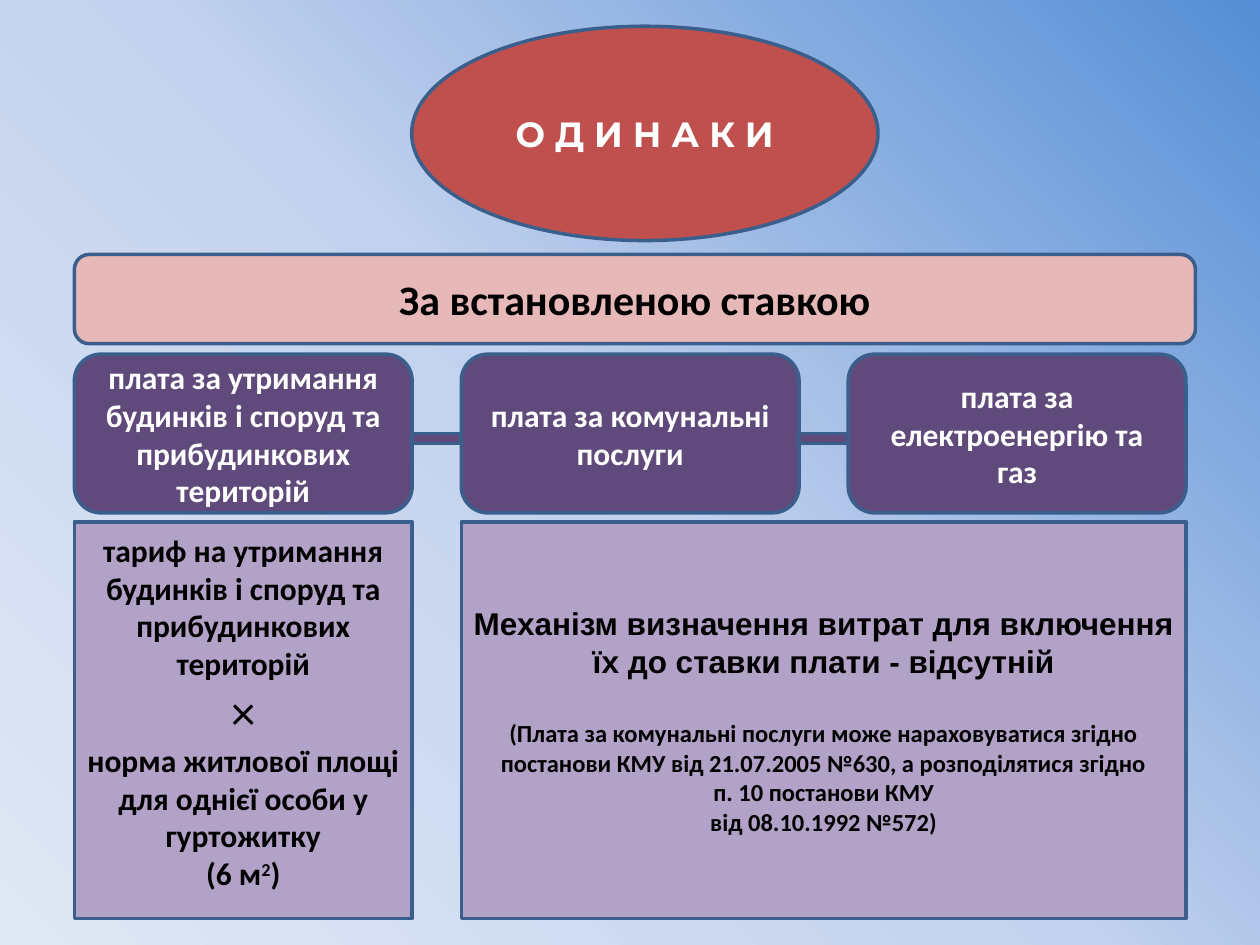
from copy import deepcopy

from pptx import Presentation
from pptx.dml.color import RGBColor
from pptx.enum.shapes import MSO_SHAPE as Preset
from pptx.enum.text import MSO_ANCHOR as Anchor, PP_ALIGN as Align
from pptx.util import Cm, Pt

WHITE = RGBColor(0xFF, 0xFF, 0xFF)
BLACK = RGBColor(0x00, 0x00, 0x00)
OUTLINE = RGBColor(0x3A, 0x5F, 0x8C)
RED = RGBColor(0xC0, 0x50, 0x4D)
PINK = RGBColor(0xE6, 0xB9, 0xB8)
PURPLE = RGBColor(0x60, 0x4A, 0x7B)
LILAC = RGBColor(0xB3, 0xA2, 0xC7)
SKY = (RGBColor(0x55, 0x8E, 0xD5), RGBColor(0xC2, 0xD1, 0xED), RGBColor(0xE1, 0xE8, 0xF5))

# Three-column grid, in centimetres
LEFT, COLUMN_WIDTH, PITCH = 1.5, 6.81, 7.8
GAP = PITCH - COLUMN_WIDTH
CARD_TOP, CARD_HEIGHT = 7.14, 3.2
DETAIL_TOP, DETAIL_HEIGHT = 10.52, 8
BAR_HEIGHT = 0.2


class SlideBuilder:
    font = "Calibri"
    line_width = Pt(2)

    def __init__(self, slide):
        self.slide = slide

    def background(self, colors, angle):
        fill = self.slide.background.fill
        fill.gradient()
        fill.gradient_angle = angle
        stop_list = self.slide.element.xpath(".//p:bg//a:gsLst")[0]
        stop_list.insert(1, deepcopy(stop_list[0]))
        for index, (stop, color) in enumerate(zip(fill.gradient_stops, colors)):
            stop.color.rgb = color
            stop.position = index / (len(colors) - 1)

    def box(self, preset, left, top, width, height, fill):
        shape = self.slide.shapes.add_shape(preset, Cm(left), Cm(top), Cm(width), Cm(height))
        shape.shadow.inherit = False
        shape.fill.solid()
        shape.fill.fore_color.rgb = fill
        shape.line.color.rgb = OUTLINE
        shape.line.width = self.line_width
        return shape.text_frame

    def paragraph(self, frame, text, size, color=BLACK, font=None, bold=True, before=0):
        first = frame.paragraphs[0]
        paragraph = frame.add_paragraph() if first.runs else first
        paragraph.alignment = Align.CENTER
        paragraph.space_before = Pt(before)
        style = dict(size=size, color=color, font=font, bold=bold)
        for index, line in enumerate(text.split("\n")):
            if index:
                paragraph.add_line_break()
            self.run(paragraph, line, **style)
        return paragraph

    def run(self, paragraph, text, size, color=BLACK, font=None, bold=True, raised=False):
        run = paragraph.add_run()
        run.text = text
        run.font.name = font or self.font
        run.font.size = Pt(size)
        run.font.bold = bold
        run.font.color.rgb = color
        if raised:
            run.font.fill  # creates the run properties before the offset is set
            run._r.get_or_add_rPr().set("baseline", "30000")


def main():
    prs = Presentation()
    prs.slide_width, prs.slide_height = Cm(25.4), Cm(19.05)
    page = SlideBuilder(prs.slides.add_slide(prs.slide_layouts[6]))
    page.background(SKY, angle=225)

    # Heading ellipse and rate banner
    heading = page.box(Preset.OVAL, 8.3, 0.53, 9.4, 4.32, RED)
    page.paragraph(heading, "О Д И Н А К И", 20, WHITE, "Montserrat")
    banner = page.box(Preset.ROUNDED_RECTANGLE, LEFT, 5.13, 22.6, 1.8, PINK)
    page.paragraph(banner, "За встановленою ставкою", 24)

    # Payment cards
    payments = (
        "плата за утримання будинків і споруд та прибудинкових територій",
        "плата за комунальні послуги",
        "плата за електроенергію та газ",
    )
    for column, payment in enumerate(payments):
        card = page.box(Preset.ROUNDED_RECTANGLE, LEFT + column * PITCH, CARD_TOP,
                        COLUMN_WIDTH, CARD_HEIGHT, PURPLE)
        page.paragraph(card, payment, 18, WHITE)

    # Tariff formula
    tariff = page.box(Preset.RECTANGLE, LEFT, DETAIL_TOP, COLUMN_WIDTH, DETAIL_HEIGHT, LILAC)
    tariff.vertical_anchor = Anchor.TOP
    tariff.margin_top = Cm(0.18)
    page.paragraph(tariff, "тариф на утримання будинків і споруд та прибудинкових територій", 18)
    page.paragraph(tariff, "×", 28, bold=False)
    norm = page.paragraph(
        tariff, "норма житлової площі для однієї особи у гуртожитку\n(6 м", 18)
    page.run(norm, "2", 18, raised=True)
    page.run(norm, ")", 18)

    # Cost mechanism, across two columns
    mechanism = page.box(Preset.RECTANGLE, LEFT + PITCH, DETAIL_TOP,
                         PITCH + COLUMN_WIDTH, DETAIL_HEIGHT, LILAC)
    page.paragraph(
        mechanism,
        "Механізм визначення витрат для включення їх до ставки плати - відсутній",
        18, font="Arial")
    page.paragraph(
        mechanism,
        "(Плата за комунальні послуги може нараховуватися згідно постанови КМУ "
        "від 21.07.2005 №630, а розподілятися згідно\n"
        "п. 10 постанови КМУ\nвід 08.10.1992 №572)",
        14, before=22)

    # Bars linking the cards
    for column in range(len(payments) - 1):
        page.box(Preset.RECTANGLE, LEFT + column * PITCH + COLUMN_WIDTH,
                 CARD_TOP + (CARD_HEIGHT - BAR_HEIGHT) / 2 + 0.1, GAP, BAR_HEIGHT, PURPLE)

    prs.save("out.pptx")


if __name__ == "__main__":
    main()
